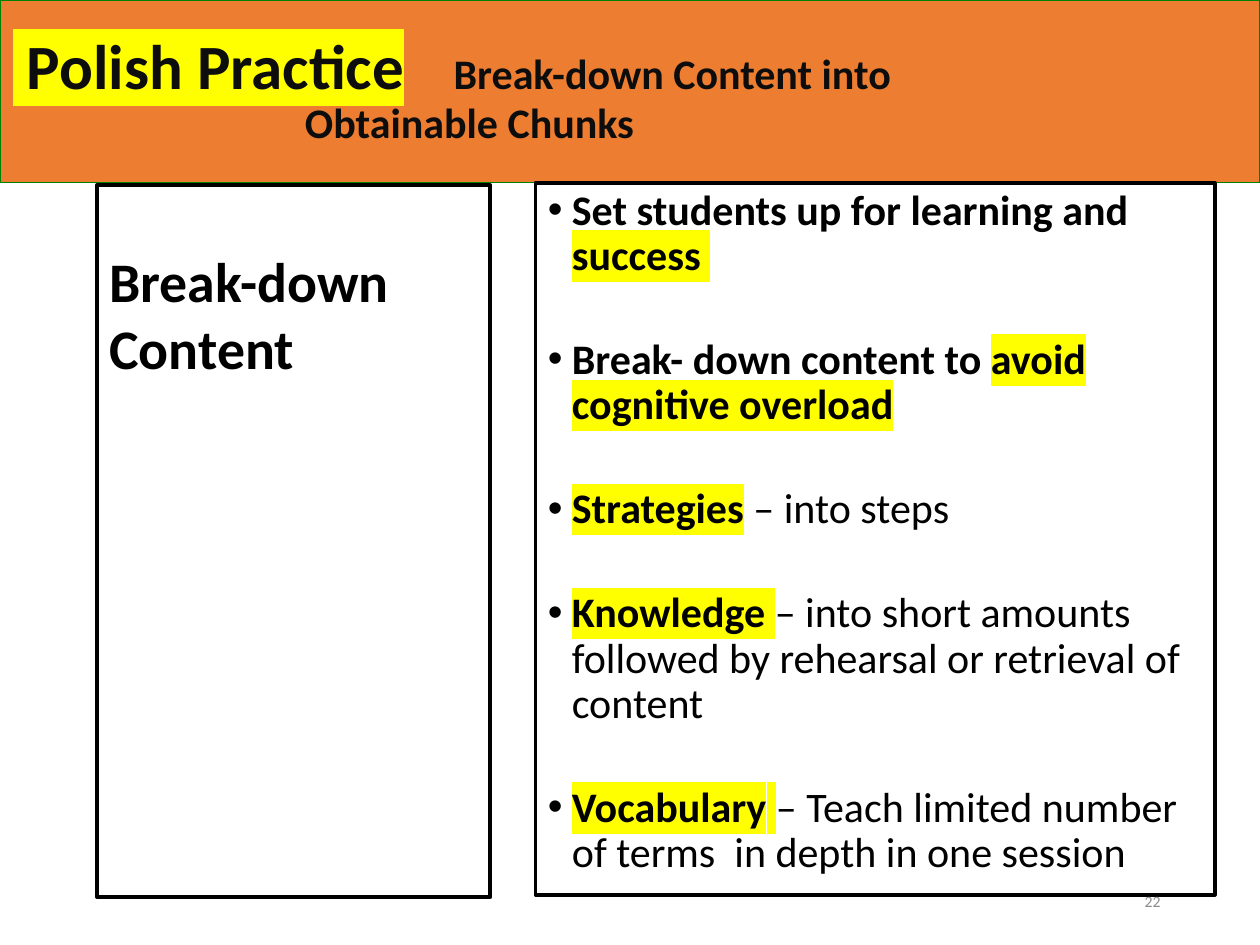
from lxml.etree import SubElement
from pptx import Presentation
from pptx.dml.color import RGBColor
from pptx.enum.text import MSO_ANCHOR, MSO_AUTO_SIZE, PP_ALIGN
from pptx.oxml.ns import qn
from pptx.util import Inches, Pt

COLORS = {
    "banner": "ED7D31",
    "banner_line": "008000",
    "title": "0D0D0D",
    "text": "000000",
    "highlight": "FFFF00",
    "number": "8C8C8C",
}
FONT = "Calibri"

BULLETS = [
    [("Set students up for learning and ", True, False), ("success ", True, True)],
    [("Break- down content to ", True, False), ("avoid cognitive overload", True, True)],
    [("Strategies", True, True), (" – into steps", False, False)],
    [("Knowledge", True, True), (" ", False, True),
     ("– into short amounts followed by rehearsal or retrieval of content", False, False)],
    [("Vocabulary", True, True), (" ", False, True),
     ("– Teach limited number of terms  in depth in one session", False, False)],
]


def color(name):
    return RGBColor.from_string(COLORS[name])


def add_span(para, text, size, color_name="text", bold=False, highlighted=False):
    span = para.add_run()
    span.text = text
    font = span.font
    font.name, font.size, font.bold = FONT, Pt(size), bold
    font.color.rgb = color(color_name)
    if highlighted:
        properties = font._element
        highlight = SubElement(properties, qn("a:highlight"))
        SubElement(highlight, qn("a:srgbClr"), val=COLORS["highlight"])
        properties.find(qn("a:solidFill")).addnext(highlight)


def set_outline(shape, color_name, width):
    shape.line.color.rgb = color(color_name)
    shape.line.width = Pt(width)


def set_indent(para, left, first=0):
    properties = para._p.get_or_add_pPr()
    properties.set("marL", str(Inches(left)))
    properties.set("indent", str(Inches(first)))
    return properties


def add_title(page):
    title = page.shapes.title
    title.left, title.top = Inches(0), Inches(0)
    title.width, title.height = Inches(10), Inches(1.45)
    title.fill.solid()
    title.fill.fore_color.rgb = color("banner")
    set_outline(title, "banner_line", 0.75)
    frame = title.text_frame
    frame.auto_size = MSO_AUTO_SIZE.NONE
    frame.vertical_anchor = MSO_ANCHOR.MIDDLE
    first, second = frame.paragraphs[0], frame.add_paragraph()
    for para in (first, second):
        para.alignment = PP_ALIGN.LEFT
        para.line_spacing = 0.9
    tabs = SubElement(set_indent(first, 0), qn("a:tabLst"))
    SubElement(tabs, qn("a:tab"), pos=str(Inches(3.75)), algn="l")
    set_indent(second, 2.32)
    add_span(first, " Polish Practice", 36, "title", True, True)
    add_span(first, "\tBreak-down Content into", 24, "title", True)
    add_span(second, "Obtainable Chunks", 24, "title", True)


def add_text_box(page, left, top, width, height):
    box = page.shapes.add_textbox(*map(Inches, (left, top, width, height)))
    box.text_frame.word_wrap = True
    return box


def add_topic(page):
    box = add_text_box(page, 0.77, 1.47, 3.12, 5.65)
    set_outline(box, "text", 2.25)
    box.text_frame.margin_top = Inches(0.49)
    add_span(box.text_frame.paragraphs[0], "Break-down Content", 31.9, bold=True)


def add_bullets(page):
    box = add_text_box(page, 4.25, 1.45, 5.39, 5.65)
    set_outline(box, "text", 2.25)
    frame = box.text_frame
    for index, spans in enumerate(BULLETS):
        para = frame.add_paragraph() if index else frame.paragraphs[0]
        para.line_spacing = 0.9
        para.space_after = Pt(33.5)
        properties = set_indent(para, 0.19, -0.19)
        SubElement(properties, qn("a:buFont"), typeface="Arial")
        SubElement(properties, qn("a:buChar"), char="•")
        for text, bold, highlighted in spans:
            add_span(para, text, 24, bold=bold, highlighted=highlighted)


def add_page_number(page):
    box = add_text_box(page, 7.06, 6.95, 2.25, 0.4)
    box.text_frame.vertical_anchor = MSO_ANCHOR.MIDDLE
    para = box.text_frame.paragraphs[0]
    para.alignment = PP_ALIGN.RIGHT
    add_span(para, "22", 9, "number")


def main():
    deck = Presentation()
    deck.slide_width, deck.slide_height = Inches(10), Inches(7.5)
    page = deck.slides.add_slide(deck.slide_layouts[5])
    add_title(page)
    add_topic(page)
    add_bullets(page)
    add_page_number(page)
    deck.save("out.pptx")


if __name__ == "__main__":
    main()
